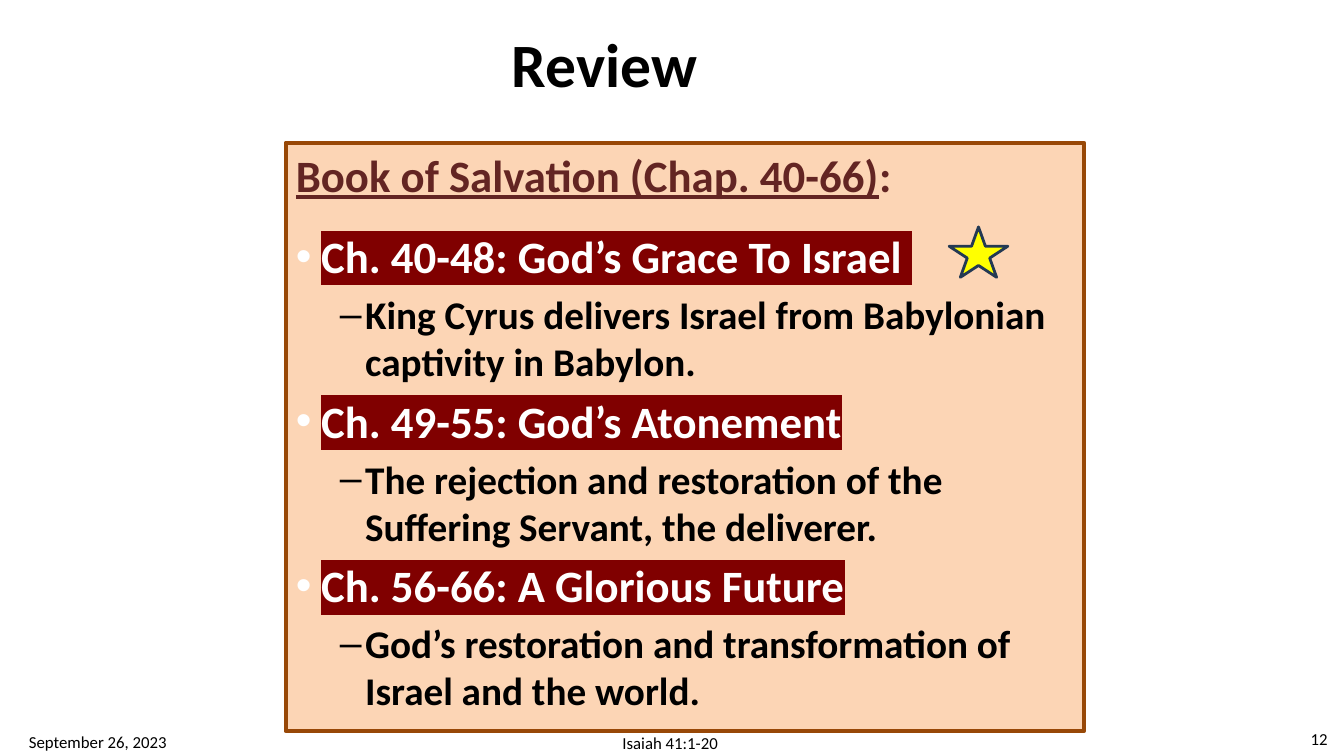
from pptx import Presentation
from pptx.dml.color import RGBColor
from pptx.enum.shapes import MSO_SHAPE
from pptx.enum.text import MSO_ANCHOR, MSO_AUTO_SIZE, PP_ALIGN
from pptx.oxml.ns import qn
from pptx.util import Cm, Pt
from lxml.etree import SubElement

BLACK = RGBColor(0x00, 0x00, 0x00)
WHITE = RGBColor(0xFF, 0xFF, 0xFF)
MAROON = RGBColor(0x80, 0x00, 0x00)
WINE = RGBColor(0x63, 0x25, 0x23)
PEACH = RGBColor(0xFC, 0xD5, 0xB5)
BROWN = RGBColor(0x98, 0x48, 0x07)
YELLOW = RGBColor(0xFF, 0xFF, 0x00)
NAVY = RGBColor(0x23, 0x39, 0x53)

CHAPTERS = [
    ("Ch. 40-48: God’s Grace To Israel ",
     "King Cyrus delivers Israel from Babylonian captivity in Babylon."),
    ("Ch. 49-55: God’s Atonement",
     "The rejection and restoration of the Suffering Servant, the deliverer."),
    ("Ch. 56-66: A Glorious Future",
     "God’s restoration and transformation of Israel and the world."),
]


class SlideBuilder:
    font = "Calibri"

    def __init__(self, prs):
        self.s = prs.slides.add_slide(prs.slide_layouts[1])

    def place(self, sp, box):
        for name, value in zip(("left", "top", "width", "height"), box):
            setattr(sp, name, Cm(value))

    def paint(self, sp, fill, line, width):
        sp.fill.solid()
        sp.fill.fore_color.rgb = fill
        sp.line.color.rgb = line
        sp.line.width = Pt(width)

    def frame(self, sp, anchor):
        tf = sp.text_frame
        settings = {"word_wrap": True, "auto_size": MSO_AUTO_SIZE.NONE,
                    "vertical_anchor": anchor}
        for name, value in settings.items():
            setattr(tf, name, value)
        return tf

    def run(self, p, text, color, highlight=None, **style):
        r = p.add_run()
        r.text = text
        r.font.color.rgb = color
        if highlight is not None:
            mark = SubElement(r.font._element, qn("a:highlight"))
            SubElement(mark, qn("a:srgbClr")).set("val", str(highlight))
        for name, value in {"name": self.font, **style}.items():
            setattr(r.font, name, value)

    def bullet(self, p, char, indent):
        pPr = p._p.get_or_add_pPr()
        hang = Cm(0.64) if char else 0
        pPr.set("marL", str(Cm(indent)))
        pPr.set("indent", str(-hang))
        if char:
            SubElement(pPr, qn("a:buChar")).set("char", char)
        else:
            SubElement(pPr, qn("a:buNone"))

    def title(self, text, box):
        sp = self.s.shapes.title
        self.place(sp, box)
        p = self.frame(sp, MSO_ANCHOR.MIDDLE).paragraphs[0]
        p.alignment = PP_ALIGN.CENTER
        self.run(p, text, BLACK, size=Pt(44), bold=True)

    def body(self, heading, chapters, box):
        sp = self.s.placeholders[1]
        self.place(sp, box)
        self.paint(sp, PEACH, BROWN, 3)
        tf = self.frame(sp, MSO_ANCHOR.TOP)
        p = tf.paragraphs[0]
        self.bullet(p, None, 0)
        p.space_before = Pt(0)
        self.run(p, heading, WINE, size=Pt(32), bold=True, underline=True)
        self.run(p, ":", WINE, size=Pt(32), bold=True, underline=False)
        for i, (chapter, summary) in enumerate(chapters):
            p = tf.add_paragraph()
            self.bullet(p, "•", 0.64)
            p.space_before = Pt(6.4 if i else 19.2)
            self.run(p, chapter, WHITE, MAROON, size=Pt(32), bold=True)
            p = tf.add_paragraph()
            p.level = 1
            self.bullet(p, "–", 1.75)
            p.space_before = Pt(5.6)
            self.run(p, summary, BLACK, size=Pt(28), bold=True)

    def label(self, text, box, align):
        sp = self.s.shapes.add_textbox(*map(Cm, box))
        p = self.frame(sp, MSO_ANCHOR.MIDDLE).paragraphs[0]
        p.alignment = align
        self.run(p, text, BLACK, size=Pt(12))

    def star(self, box):
        sp = self.s.shapes.add_shape(MSO_SHAPE.STAR_5_POINT, *map(Cm, box))
        sp.shadow.inherit = False
        self.paint(sp, YELLOW, NAVY, 2)


def main():
    prs = Presentation()
    prs.slide_width, prs.slide_height = Cm(33.87), Cm(19.05)
    slide = SlideBuilder(prs)
    slide.title("Review", (0, 0, 30.48, 3.18))
    slide.body("Book of Salvation (Chap. 40-66)", CHAPTERS,
               (7.2, 3.6, 20.12, 14.82))
    slide.label("September 26, 2023", (0.48, 18.19, 5.36, 1.02), PP_ALIGN.LEFT)
    slide.label("Isaiah 41:1-20", (7.72, 18.21, 18.34, 1.02), PP_ALIGN.CENTER)
    slide.label("12", (31.17, 18.11, 2.54, 1.02), PP_ALIGN.RIGHT)
    slide.star((23.92, 5.72, 1.48, 1.27))
    prs.save("out.pptx")


if __name__ == "__main__":
    main()
